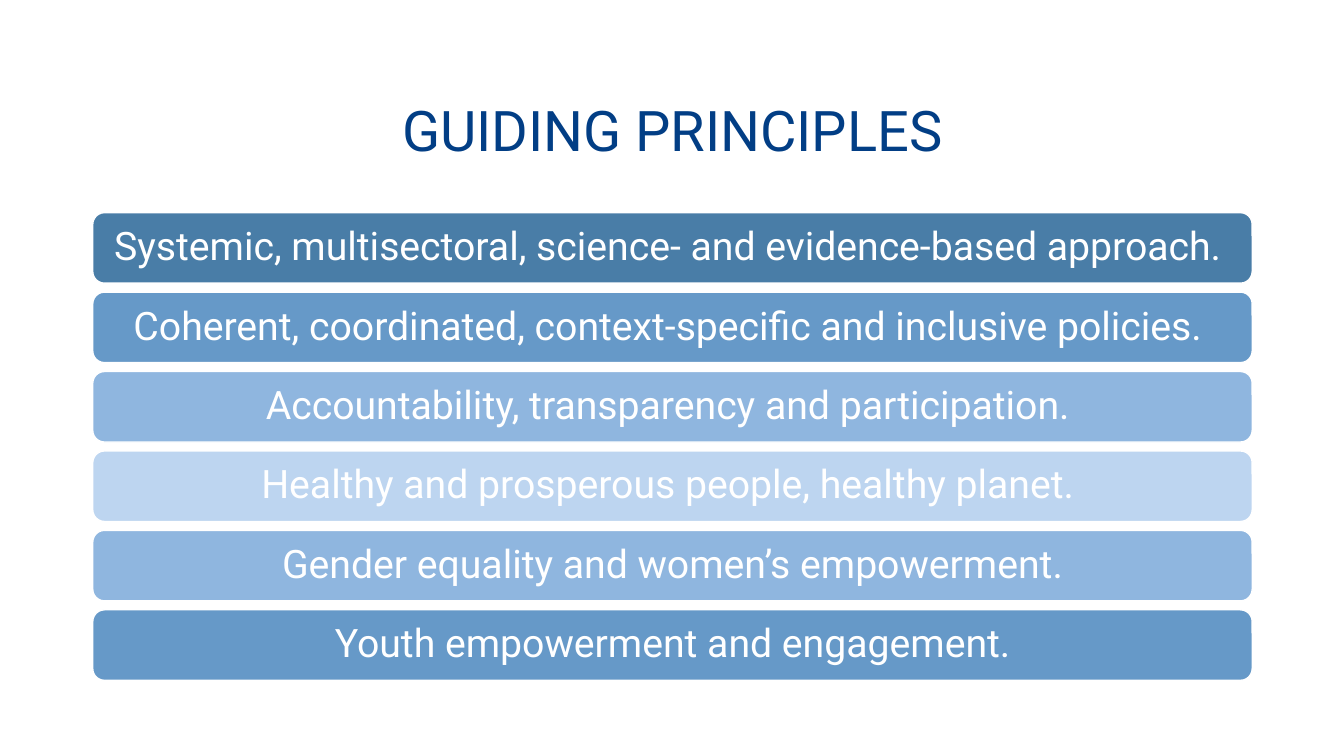
from pptx import Presentation
from pptx.dml.color import RGBColor
from pptx.enum.shapes import MSO_SHAPE
from pptx.enum.text import MSO_ANCHOR, PP_ALIGN
from pptx.util import Inches, Pt

FONT = "Roboto"
NAVY = RGBColor(0x02, 0x3E, 0x85)
WHITE = RGBColor(0xFF, 0xFF, 0xFF)
DEEP_BLUE = RGBColor(0x49, 0x7D, 0xA7)
MID_BLUE = RGBColor(0x66, 0x99, 0xC8)
SOFT_BLUE = RGBColor(0x8F, 0xB6, 0xDF)
PALE_BLUE = RGBColor(0xBD, 0xD5, 0xF0)

LEFT, WIDTH = 0.92, 11.5
BAR_TOP, BAR_HEIGHT, BAR_STEP = 2.11, 0.7, 0.788

PRINCIPLES = [
    ("Systemic, multisectoral, science- and evidence-based approach. ", DEEP_BLUE),
    ("Coherent, coordinated, context-specific and inclusive policies. ", MID_BLUE),
    ("Accountability, transparency and participation. ", SOFT_BLUE),
    ("Healthy and prosperous people, healthy planet. ", PALE_BLUE),
    ("Gender equality and women’s empowerment.", SOFT_BLUE),
    ("Youth empowerment and engagement.", MID_BLUE),
]


def write_centred(shape, text, size, color):
    frame = shape.text_frame
    frame.word_wrap = True
    frame.vertical_anchor = MSO_ANCHOR.MIDDLE
    paragraph = frame.paragraphs[0]
    paragraph.text = text
    paragraph.alignment = PP_ALIGN.CENTER
    paragraph.line_spacing = 0.9
    paragraph.font.name = FONT
    paragraph.font.size = Pt(size)
    paragraph.font.color.rgb = color


presentation = Presentation()
presentation.slide_width = Inches(13.33)
presentation.slide_height = Inches(7.5)
slide = presentation.slides.add_slide(presentation.slide_layouts[6])

# Title
title = slide.shapes.add_textbox(Inches(LEFT), Inches(0.6), Inches(WIDTH), Inches(1.45))
write_centred(title, "GUIDING PRINCIPLES", 40, NAVY)

# One bar per principle
for index, (principle, fill_color) in enumerate(PRINCIPLES):
    bar = slide.shapes.add_shape(
        MSO_SHAPE.ROUNDED_RECTANGLE,
        Inches(LEFT), Inches(BAR_TOP + index * BAR_STEP),
        Inches(WIDTH), Inches(BAR_HEIGHT),
    )
    bar.shadow.inherit = False
    bar.fill.solid()
    bar.fill.fore_color.rgb = fill_color
    bar.line.color.rgb = WHITE
    bar.line.width = Pt(1)
    frame = bar.text_frame
    frame.margin_left = frame.margin_right = Inches(0.12)
    frame.margin_top = frame.margin_bottom = Inches(0.12)
    write_centred(bar, principle, 28, WHITE)

presentation.save("out.pptx")
